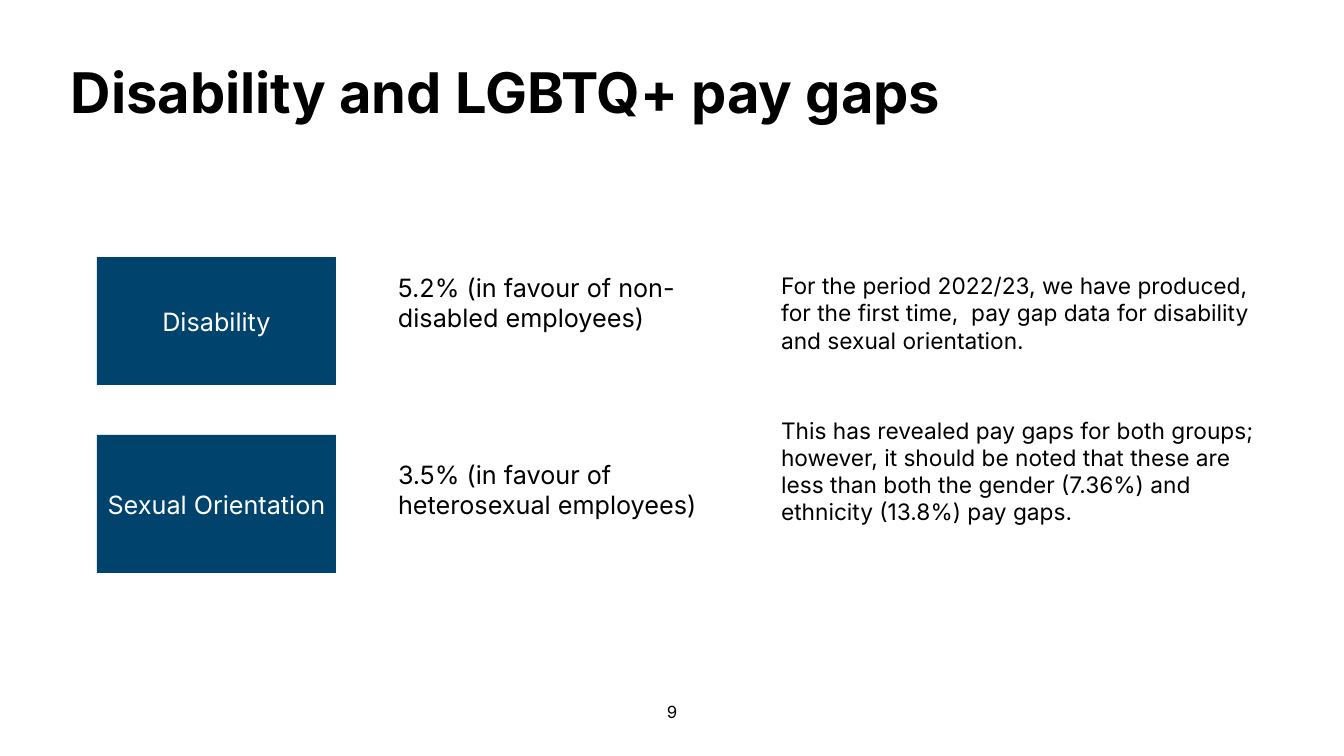
from dataclasses import dataclass

from pptx import Presentation
from pptx.dml.color import RGBColor
from pptx.enum.shapes import MSO_SHAPE
from pptx.enum.text import MSO_ANCHOR, PP_ALIGN
from pptx.util import Emu, Inches, Pt

RECTANGLE = MSO_SHAPE.RECTANGLE
LEFT, CENTER = PP_ALIGN.LEFT, PP_ALIGN.CENTER
MIDDLE = MSO_ANCHOR.MIDDLE


@dataclass(frozen=True)
class Theme:
    font: str = "Inter"
    ink: RGBColor = RGBColor(0x00, 0x00, 0x00)
    panel: RGBColor = RGBColor(0x00, 0x43, 0x6C)
    panel_ink: RGBColor = RGBColor(0xFF, 0xFF, 0xFF)
    title_size: float = 40
    body_size: float = 18
    commentary_size: float = 16.2
    page_size: float = 12
    commentary_gap: float = 45


THEME = Theme()

TITLE = "Disability and LGBTQ+ pay gaps"
PAGE_NUMBER = "9"
# group, panel top, panel height, pay gap, pay gap top, pay gap width
PAY_GAPS = [
    ("Disability", 257, 128,
     "5.2% (in favour of non-disabled employees)", 267, 310),
    ("Sexual Orientation", 435, 138,
     "3.5% (in favour of heterosexual employees)", 454, 325),
]
COMMENTARY = [
    "For the period 2022/23, we have produced, for the first time,  "
    "pay gap data for disability and sexual orientation.",
    "This has revealed pay gaps for both groups; however, it should be noted "
    "that these are less than both the gender (7.36%) and ethnicity (13.8%) "
    "pay gaps.",
]

TITLE_BOX = (61, 60, 1232, 128)
COMMENTARY_BOX = (771, 267, 496, 342)
PAGE_BOX = (521, 697, 302, 40)
PANEL_LEFT, PANEL_WIDTH = 97, 239
PAY_GAP_LEFT, PAY_GAP_HEIGHT = 388, 72
EMU_PER_PX = 914400 / 100.8


def to_emu(box):
    return [Emu(round(px * EMU_PER_PX)) for px in box]


def write(frame, texts, size, color=THEME.ink, align=LEFT, bold=False, gap=0):
    """Fill the frame with one paragraph per text, gap points apart."""
    frame.word_wrap = True
    for index, text in enumerate(texts):
        paragraph = frame.add_paragraph() if index else frame.paragraphs[0]
        paragraph.text = text
        paragraph.alignment = align
        if index:
            paragraph.space_before = Pt(gap)
        font = paragraph.font
        font.name, font.size, font.bold = THEME.font, Pt(size), bold
        font.color.rgb = color


def add_text(slide, box, texts, size, **style):
    frame = slide.shapes.add_textbox(*to_emu(box)).text_frame
    write(frame, texts, size, **style)
    return frame


def add_panel(slide, box, label):
    panel = slide.shapes.add_shape(RECTANGLE, *to_emu(box))
    panel.shadow.inherit = False
    panel.fill.solid()
    panel.fill.fore_color.rgb = THEME.panel
    panel.line.fill.background()
    panel.text_frame.vertical_anchor = MIDDLE
    write(panel.text_frame, [label], THEME.body_size,
          color=THEME.panel_ink, align=CENTER)


def main():
    deck = Presentation()
    deck.slide_width, deck.slide_height = Inches(13.33), Inches(7.5)
    slide = deck.slides.add_slide(deck.slide_layouts[6])

    title = add_text(slide, TITLE_BOX, [TITLE], THEME.title_size, bold=True)
    title.paragraphs[0].line_spacing = 0.9

    for group, top, height, pay_gap, gap_top, gap_width in PAY_GAPS:
        add_panel(slide, (PANEL_LEFT, top, PANEL_WIDTH, height), group)
        add_text(slide, (PAY_GAP_LEFT, gap_top, gap_width, PAY_GAP_HEIGHT),
                 [pay_gap], THEME.body_size)

    add_text(slide, COMMENTARY_BOX, COMMENTARY, THEME.commentary_size,
             gap=THEME.commentary_gap)
    add_text(slide, PAGE_BOX, [PAGE_NUMBER], THEME.page_size, align=CENTER)
    deck.save("out.pptx")


if __name__ == "__main__":
    main()
